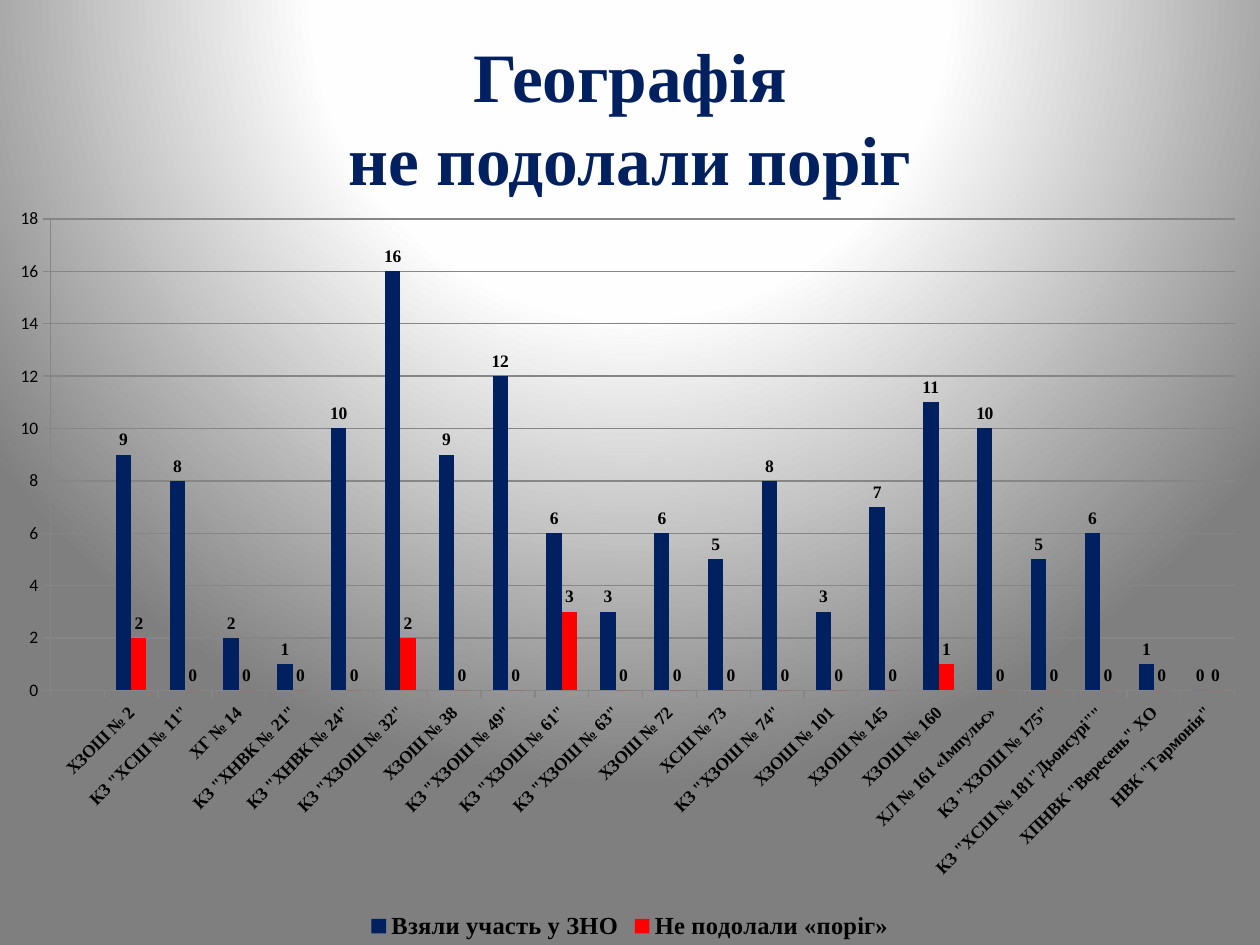
import pptx
import pptx.chart.data
import pptx.dml.color
import pptx.enum.chart
import pptx.enum.text
import pptx.oxml
import pptx.oxml.ns
import pptx.util
from pptx.util import Inches

SERIF = "Times New Roman"
NAVY, RED, BLACK, GRAY = "002060", "FF0000", "000000", "868686"
SCHOOLS = [
    ("", None, None),
    ("ХЗОШ № 2", 9, 2),
    ('КЗ "ХСШ № 11"', 8, 0),
    ("ХГ № 14", 2, 0),
    ('КЗ "ХНВК № 21"', 1, 0),
    ('КЗ "ХНВК № 24"', 10, 0),
    ('КЗ "ХЗОШ № 32"', 16, 2),
    ("ХЗОШ № 38", 9, 0),
    ('КЗ "ХЗОШ № 49"', 12, 0),
    ('КЗ "ХЗОШ № 61"', 6, 3),
    ('КЗ "ХЗОШ № 63"', 3, 0),
    ("ХЗОШ № 72", 6, 0),
    ("ХСШ № 73", 5, 0),
    ('КЗ "ХЗОШ № 74"', 8, 0),
    ("ХЗОШ № 101", 3, 0),
    ("ХЗОШ № 145", 7, 0),
    ("ХЗОШ № 160", 11, 1),
    ("ХЛ № 161 «Імпульс»", 10, 0),
    ('КЗ "ХЗОШ № 175"', 5, 0),
    ('КЗ "ХСШ № 181"Дьонсурі""', 6, 0),
    ('ХПНВК "Вересень" ХО', 1, 0),
    ('НВК "Гармонія"', 0, 0),
]


def color(value):
    return pptx.dml.color.RGBColor.from_string(value)


def style_font(font, size, name=SERIF, fill=BLACK, bold=True):
    font.size = pptx.util.Pt(size)
    font.name = name
    font.bold = bold
    font.color.rgb = color(fill)


def paint_background(slide):
    slide.background.fill.gradient()
    gradient = slide.element.xpath(".//p:bg//a:gradFill")[0]
    stops = [(0, "FFFFFF"), (40, "FEFEFE"), (100, "7F7F7F")]
    stop_xml = "".join(
        f'<a:gs pos="{position * 1000}"><a:srgbClr val="{value}"/></a:gs>'
        for position, value in stops
    )
    replacement = pptx.oxml.parse_xml(
        f'<a:gradFill {pptx.oxml.ns.nsdecls("a")} rotWithShape="1">'
        f'<a:gsLst>{stop_xml}</a:gsLst><a:path path="circle">'
        '<a:fillToRect l="50000" t="-80000" r="50000" b="180000"/>'
        "</a:path></a:gradFill>"
    )
    gradient.getparent().replace(gradient, replacement)


def add_title(slide, lines, left, top, width, height):
    frame = slide.shapes.add_textbox(left, top, width, height).text_frame
    frame.word_wrap = True
    frame.vertical_anchor = pptx.enum.text.MSO_ANCHOR.MIDDLE
    paragraph = frame.paragraphs[0]
    paragraph.alignment = pptx.enum.text.PP_ALIGN.CENTER
    style_font(paragraph.font, 39.6, fill=NAVY)
    for index, line in enumerate(lines):
        if index:
            paragraph.add_line_break()
        paragraph.add_run().text = line


def set_plot_layout(chart, x, y, width, height):
    plot_area = chart._chartSpace.chart.plotArea
    for layout in plot_area.xpath("c:layout"):
        plot_area.remove(layout)
    sizes = "".join(
        f'<c:{tag} val="{value}"/>'
        for tag, value in (("x", x), ("y", y), ("w", width), ("h", height))
    )
    plot_area.insert(0, pptx.oxml.parse_xml(
        f'<c:layout {pptx.oxml.ns.nsdecls("c")}><c:manualLayout>'
        '<c:layoutTarget val="inner"/><c:xMode val="edge"/><c:yMode val="edge"/>'
        f"{sizes}</c:manualLayout></c:layout>"
    ))


def add_results_chart(slide, left, top, width, height):
    names, participants, failures = zip(*SCHOOLS)
    data = pptx.chart.data.CategoryChartData()
    data.categories = names
    data.add_series("Взяли участь у ЗНО", participants)
    data.add_series("Не подолали «поріг»", failures)
    chart = slide.shapes.add_chart(
        pptx.enum.chart.XL_CHART_TYPE.COLUMN_CLUSTERED,
        left, top, width, height, data,
    ).chart
    style_font(chart.font, 10, name="Calibri", bold=False)
    chart.has_title = False
    chart.has_legend = True
    chart.legend.position = pptx.enum.chart.XL_LEGEND_POSITION.BOTTOM
    chart.legend.include_in_layout = False
    style_font(chart.legend.font, 14)

    plot = chart.plots[0]
    plot.vary_by_categories = False
    plot.gap_width = 150
    plot.overlap = 0
    for series, fill in zip(plot.series, (NAVY, RED)):
        series.format.fill.solid()
        series.format.fill.fore_color.rgb = color(fill)
        series.invert_if_negative = False
        labels = series.data_labels
        labels.show_value = True
        labels.position = pptx.enum.chart.XL_LABEL_POSITION.OUTSIDE_END
        style_font(labels.font, 10)

    value_axis, category_axis = chart.value_axis, chart.category_axis
    value_axis.minimum_scale, value_axis.maximum_scale = 0, 18
    value_axis.major_unit = 2
    value_axis.has_major_gridlines = True
    style_font(category_axis.tick_labels.font, 10)
    category_axis._element.xpath("c:txPr/a:bodyPr")[0].set("rot", "-2700000")
    for axis in (value_axis, category_axis):
        axis.major_tick_mark = pptx.enum.chart.XL_TICK_MARK.OUTSIDE
    for part in (value_axis, category_axis, value_axis.major_gridlines):
        part.format.line.color.rgb = color(GRAY)
        part.format.line.width = pptx.util.Pt(0.75)
    set_plot_layout(chart, 0.04, 0.03, 0.94, 0.63)


def main():
    presentation = pptx.Presentation()
    presentation.slide_width, presentation.slide_height = Inches(10), Inches(7.5)
    slide = presentation.slides.add_slide(presentation.slide_layouts[6])
    paint_background(slide)
    add_title(slide, ["Географія", "не подолали поріг"],
              Inches(0.5), Inches(0.3), Inches(9), Inches(1.25))
    add_results_chart(slide, Inches(0), Inches(1.56), Inches(10), Inches(5.94))
    presentation.save("out.pptx")


if __name__ == "__main__":
    main()
